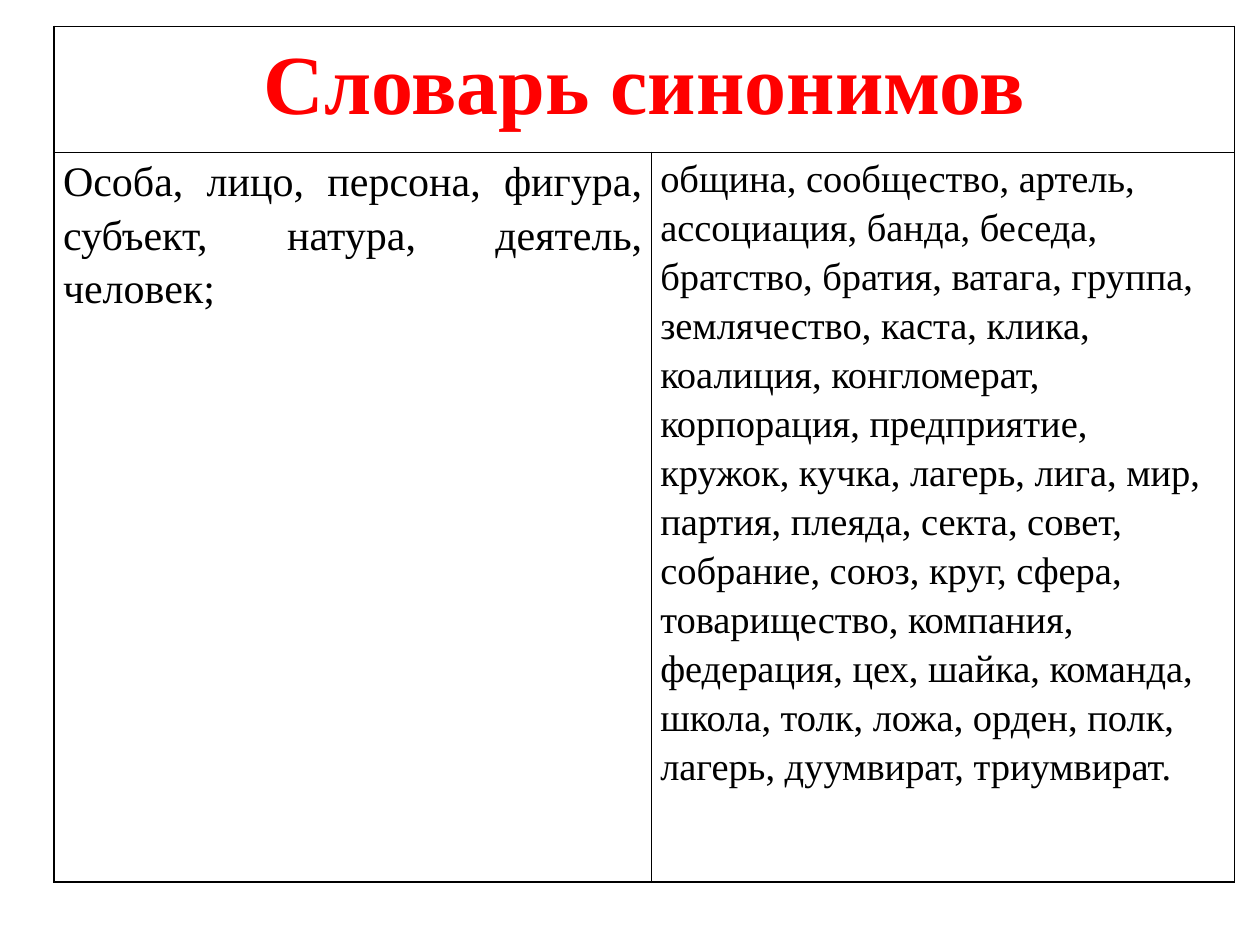
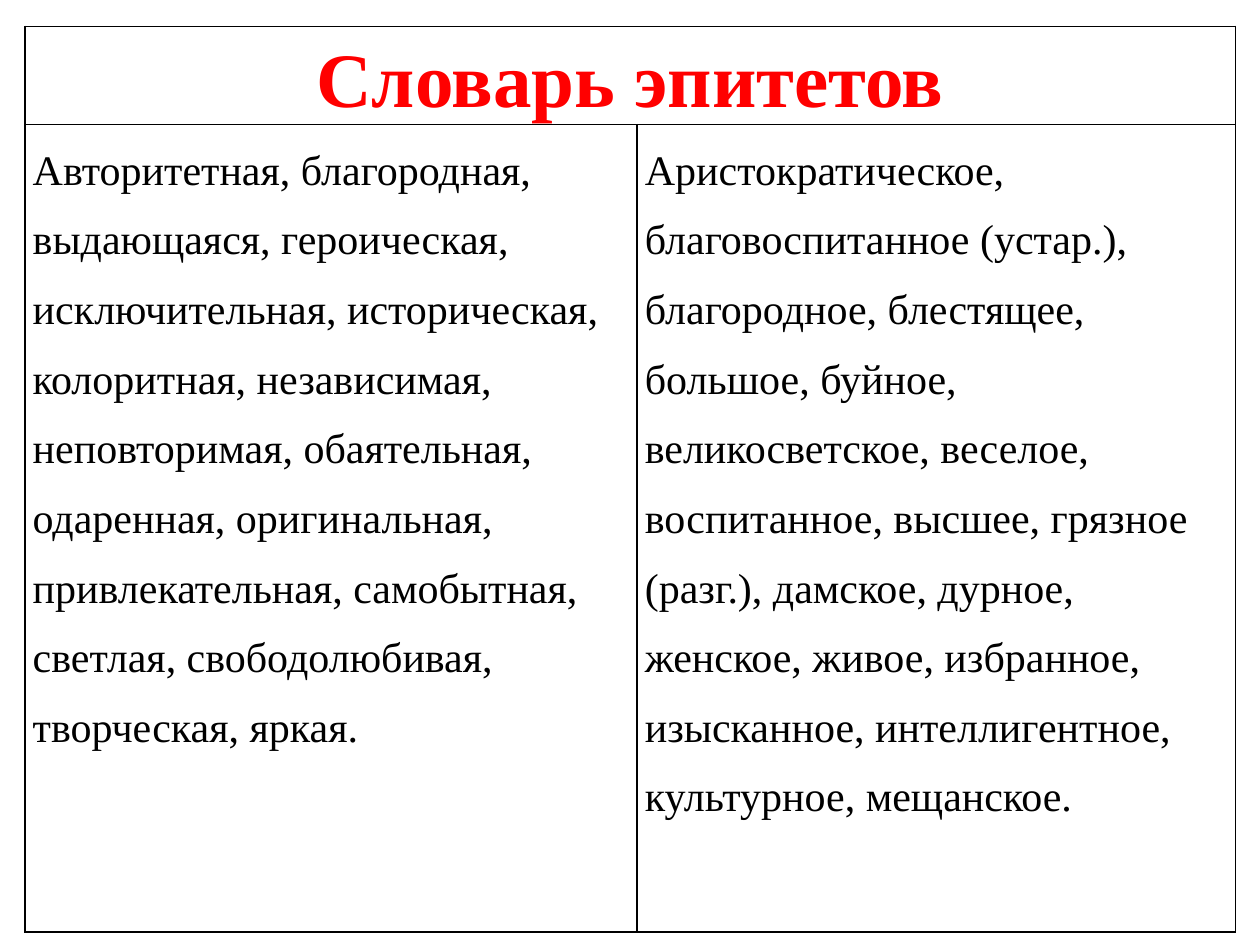
from dataclasses import dataclass

from lxml import etree
from pptx import Presentation
from pptx import util as u
from pptx.dml import color
from pptx.enum import text
from pptx.oxml import ns


@dataclass(frozen=True)
class Theme:
    font: str = "Times New Roman"
    title_color: str = "FF0000"
    text_color: str = "000000"
    border_color: str = "000000"
    border_width: int = u.Pt(1)
    large_title: int = 48
    title: int = 44
    body: int = 24
    dense_body: int = 22


class DictionaryDeck:
    def __init__(self, theme):
        self.theme = theme
        self.presentation = Presentation()
        self.presentation.slide_width = u.Cm(25.4)
        self.presentation.slide_height = u.Cm(19.05)
        self.slide = None

    def add_slide(self):
        self.slide = self.presentation.slides.add_slide(self.presentation.slide_layouts[6])

    def style_cell(self, cell, inset):
        properties = cell._tc.get_or_add_tcPr()
        for side in ("L", "R", "T", "B"):
            line = etree.SubElement(properties, ns.qn(f"a:ln{side}"), w=str(self.theme.border_width))
            fill = etree.SubElement(line, ns.qn("a:solidFill"))
            etree.SubElement(fill, ns.qn("a:srgbClr"), val=self.theme.border_color)
        cell.fill.background()
        cell.margin_left = cell.margin_right = u.Cm(inset)
        cell.margin_top = cell.margin_bottom = 0

    def add_text(self, cell, words, size, spacing, alignment, title=False):
        paragraph = cell.text_frame.paragraphs[0]
        paragraph.alignment = alignment
        paragraph.line_spacing = spacing
        run = paragraph.add_run()
        run.text = words
        run.font.name = self.theme.font
        run.font.size = u.Pt(size)
        run.font.bold = title
        hue = self.theme.title_color if title else self.theme.text_color
        run.font.color.rgb = color.RGBColor.from_string(hue)

    def add_dictionary(self, title, title_size, entries, left, widths, heights, inset, spacing):
        frame = self.slide.shapes.add_table(
            2, 2, u.Cm(left), u.Cm(0.53), u.Cm(sum(widths)), u.Cm(sum(heights)))
        table = frame.table
        table.first_row = table.horz_banding = False
        for column, width in zip(table.columns, widths):
            column.width = u.Cm(width)
        for row, height in zip(table.rows, heights):
            row.height = u.Cm(height)
        for cell in table.iter_cells():
            self.style_cell(cell, inset)
        heading = table.cell(0, 0)
        heading.merge(table.cell(0, 1))
        self.add_text(heading, title, title_size, 1.15, text.PP_ALIGN.CENTER, title=True)
        for index, (words, size, alignment) in enumerate(entries):
            self.add_text(table.cell(1, index), words, size, spacing, alignment)


PERSON_SYNONYMS = "Особа, лицо, персона, фигура, субъект, натура, деятель, человек;"
SOCIETY_SYNONYMS = (
    "община, сообщество, артель, ассоциация, банда, беседа, братство, братия, ватага, "
    "группа, землячество, каста, клика, коалиция, конгломерат, корпорация, предприятие, "
    "кружок, кучка, лагерь, лига, мир, партия, плеяда, секта, совет, собрание, союз, круг, "
    "сфера, товарищество, компания, федерация, цех, шайка, команда, школа, толк, ложа, "
    "орден, полк, лагерь, дуумвират, триумвират."
)
PERSON_EPITHETS = (
    "Авторитетная, благородная, выдающаяся, героическая, исключительная, историческая, "
    "колоритная, независимая, неповторимая, обаятельная, одаренная, оригинальная, "
    "привлекательная, самобытная, светлая, свободолюбивая, творческая, яркая."
)
SOCIETY_EPITHETS = (
    "Аристократическое, благовоспитанное (устар.), благородное, блестящее, большое, "
    "буйное, великосветское, веселое, воспитанное, высшее, грязное (разг.), дамское, "
    "дурное, женское, живое, избранное, изысканное, интеллигентное, культурное, мещанское."
)


def main():
    theme = Theme()
    deck = DictionaryDeck(theme)
    align = text.PP_ALIGN

    deck.add_slide()
    deck.add_dictionary(
        "Словарь синонимов", theme.large_title,
        [(PERSON_SYNONYMS, theme.body, align.JUSTIFY),
         (SOCIETY_SYNONYMS, theme.dense_body, align.LEFT)],
        left=1.09, widths=(12.04, 11.76), heights=(2.54, 14.71), inset=0.18, spacing=1.15)

    deck.add_slide()
    deck.add_dictionary(
        "Словарь эпитетов", theme.title,
        [(PERSON_EPITHETS, theme.body, align.LEFT),
         (SOCIETY_EPITHETS, theme.body, align.LEFT)],
        left=0.5, widths=(12.34, 12.07), heights=(1.98, 16.28), inset=0.16, spacing=1.5)

    deck.presentation.save("out.pptx")


if __name__ == "__main__":
    main()
